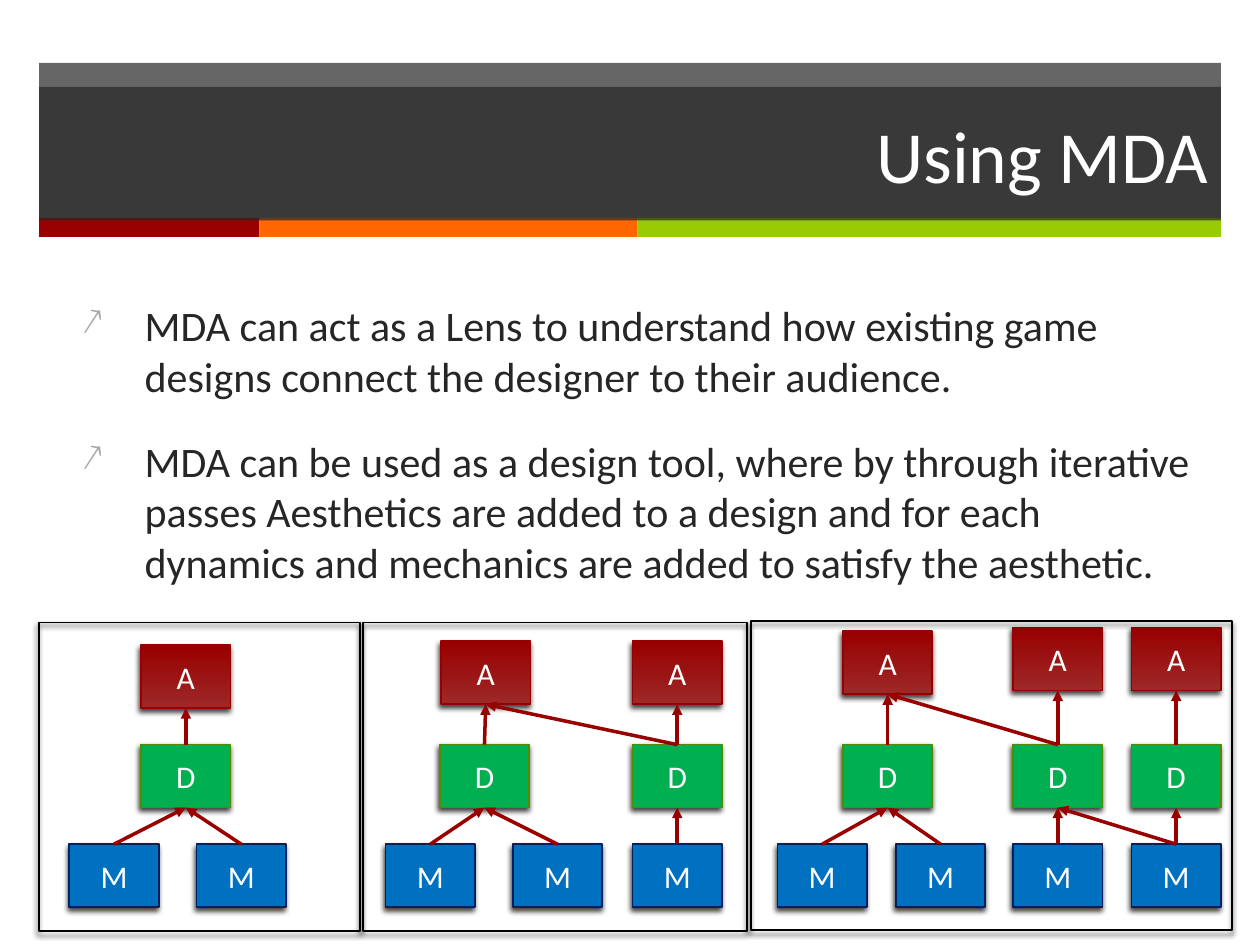
"""Builds the "Using MDA" slide: two points above three growing mechanics-dynamics-aesthetics graphs."""
from dataclasses import dataclass

from lxml import etree
from pptx import Presentation
from pptx import util as u
from pptx.dml.color import RGBColor
from pptx.enum import shapes, text
from pptx.oxml.ns import qn

COLUMNS, ROWS = 100, 75
FONT = "Calibri"
DARK, WHITE, RED = "262626", "FFFFFF", "990000"
NODE_SIZE = (7.1, 5)
MECHANIC_ROW, DYNAMIC_ROW = 67, 59.1
TOP, BOTTOM = 0, 2


@dataclass(frozen=True)
class Role:
    letter: str
    fills: tuple
    outline: str


@dataclass(frozen=True)
class Stage:
    left: float
    top: float
    width: float
    aesthetics: tuple
    dynamics: tuple
    mechanics: tuple
    mechanic_links: tuple
    dynamic_links: tuple


AESTHETIC = Role("A", ("9D2828", RED), "960000")
DYNAMIC = Role("D", ("00B050",), "528A02")
MECHANIC = Role("M", ("0070C0",), "002060")

STAGES = (
    Stage(3.1, 49.4, 25.5, ((11.2, 51.2),), (11.2,), (5.5, 15.6),
          ((0, 0), (1, 0)), ((0, 0),)),
    Stage(28.8, 49.4, 30.5, ((35, 50.9), (50.2, 50.9)), (34.9, 50.2), (30.6, 40.7, 50.2),
          ((0, 0), (1, 0), (2, 1)), ((0, 0), (1, 0), (1, 1))),
    Stage(59.6, 49.3, 38.2, ((66.9, 50.1), (80.4, 49.8), (89.8, 49.8)),
          (66.9, 80.4, 89.8), (61.7, 71.1, 80.4, 89.8),
          ((0, 0), (1, 0), (2, 1), (3, 1), (3, 2)), ((0, 0), (1, 0), (1, 1), (2, 2))),
)
STRIPES = ((3.1, 17.5, RED), (20.6, 30, "FF6600"), (50.6, 46.3, "99CC00"))
POINTS = (
    "MDA can act as a Lens to understand how existing game designs connect the designer to their audience.",
    "MDA can be used as a design tool, where by through iterative passes Aesthetics are added to a design "
    "and for each dynamics and mechanics are added to satisfy the aesthetic.",
)

deck = Presentation()
deck.slide_width, deck.slide_height = u.Inches(10), u.Inches(7.5)
slide = deck.slides.add_slide(deck.slide_layouts[5])


def color(value: str) -> RGBColor:
    return RGBColor.from_string(value)


def place(left: float, top: float, width: float, height: float) -> tuple:
    across, down = deck.slide_width / COLUMNS, deck.slide_height / ROWS
    return round(left * across), round(top * down), round(width * across), round(height * down)


def add(parent, tag: str, **attributes: str):
    return etree.SubElement(parent, qn(tag), attributes)


def paint(shape, fill: str, opacity: int = 100) -> None:
    shape.fill.solid()
    shape.fill.fore_color.rgb = color(fill)
    if opacity < 100:
        add(shape.element.spPr.find(".//" + qn("a:srgbClr")), "a:alpha", val=str(opacity * 1000))


def style(paragraph, size: float, ink: str, align) -> None:
    paragraph.alignment = align
    paragraph.font.name = FONT
    paragraph.font.size = u.Pt(size)
    paragraph.font.color.rgb = color(ink)


def rectangle(*area: float):
    shape = slide.shapes.add_shape(shapes.MSO_SHAPE.RECTANGLE, *place(*area))
    shape.shadow.inherit = False
    shape.line.fill.background()
    return shape


def outline(shape, ink: str) -> None:
    shape.line.color.rgb = color(ink)
    shape.line.width = u.Pt(1)


def cast_shadow(shape) -> None:
    effects = shape.element.spPr.find(qn("a:effectLst"))
    shadow = add(effects, "a:outerShdw", blurRad=str(u.Pt(3)), dist=str(u.Pt(2)),
                 dir=str(110 * 60000), rotWithShape="0")
    add(add(shadow, "a:srgbClr", val="000000"), "a:alpha", val="75000")


def draw_node(role: Role, left: float, top: float):
    node = rectangle(left, top, *NODE_SIZE)
    if len(role.fills) > 1:
        node.fill.gradient()
        node.fill.gradient_angle = 90
        for stop, fill in zip(node.fill.gradient_stops, role.fills):
            stop.color.rgb = color(fill)
    else:
        paint(node, role.fills[0])
    outline(node, role.outline)
    cast_shadow(node)
    node.text_frame.text = role.letter
    node.text_frame.vertical_anchor = text.MSO_ANCHOR.MIDDLE
    style(node.text_frame.paragraphs[0], 18, WHITE, text.PP_ALIGN.CENTER)
    return node


def draw_link(source, target) -> None:
    arrow = slide.shapes.add_connector(shapes.MSO_CONNECTOR.STRAIGHT, 0, 0, 0, 0)
    arrow.begin_connect(source, TOP)
    arrow.end_connect(target, BOTTOM)
    arrow.line.color.rgb = color(RED)
    arrow.line.width = u.Pt(2)
    properties = arrow.element.spPr
    add(properties.find(qn("a:ln")), "a:tailEnd", type="triangle")
    add(properties, "a:effectLst")


def draw_stage(stage: Stage) -> None:
    aesthetics = [draw_node(AESTHETIC, left, top) for left, top in stage.aesthetics]
    dynamics = [draw_node(DYNAMIC, left, DYNAMIC_ROW) for left in stage.dynamics]
    mechanics = [draw_node(MECHANIC, left, MECHANIC_ROW) for left in stage.mechanics]
    for source, target in stage.mechanic_links:
        draw_link(mechanics[source], dynamics[target])
    for source, target in stage.dynamic_links:
        draw_link(dynamics[source], aesthetics[target])


def draw_panel(stage: Stage) -> None:
    panel = rectangle(stage.left, stage.top, stage.width, 24.5)
    panel.fill.background()
    outline(panel, "000000")
    cast_shadow(panel)


def draw_heading() -> None:
    paint(rectangle(3.1, 5, 93.8, 12.4), DARK, 70)
    for left, width, fill in STRIPES:
        paint(rectangle(left, 17.3, width, 1.5), fill)
    title = slide.shapes.title
    title.element.getparent().append(title.element)
    title.left, title.top, title.width, title.height = place(3.1, 6.9, 93.8, 10.6)
    paint(title, DARK, 70)
    title.text_frame.text = "Using MDA"
    title.text_frame.vertical_anchor = text.MSO_ANCHOR.MIDDLE
    style(title.text_frame.paragraphs[0], 42, WHITE, text.PP_ALIGN.RIGHT)


def add_bullet(paragraph) -> None:
    properties = paragraph._p.get_or_add_pPr()
    properties.set("marL", str(u.Inches(0.5)))
    properties.set("indent", str(-u.Inches(0.5)))
    tint = etree.Element(qn("a:buClr"))
    add(tint, "a:srgbClr", val="A6A6A6")
    size = etree.Element(qn("a:buSzPct"), val="90000")
    mark = etree.Element(qn("a:buChar"), char="↗")
    for part in (tint, size, mark):
        properties.find(qn("a:defRPr")).addprevious(part)


def draw_points() -> None:
    frame = slide.shapes.add_textbox(*place(5.5, 23.3, 91.4, 26)).text_frame
    frame.word_wrap = True
    frame.text = "\n".join(POINTS)
    for paragraph in frame.paragraphs:
        style(paragraph, 24, DARK, text.PP_ALIGN.LEFT)
        paragraph.space_before = u.Pt(20)
        add_bullet(paragraph)


def main() -> None:
    draw_heading()
    draw_points()
    for stage in STAGES:
        draw_stage(stage)
    for stage in STAGES:
        draw_panel(stage)
    deck.save("out.pptx")


if __name__ == "__main__":
    main()
